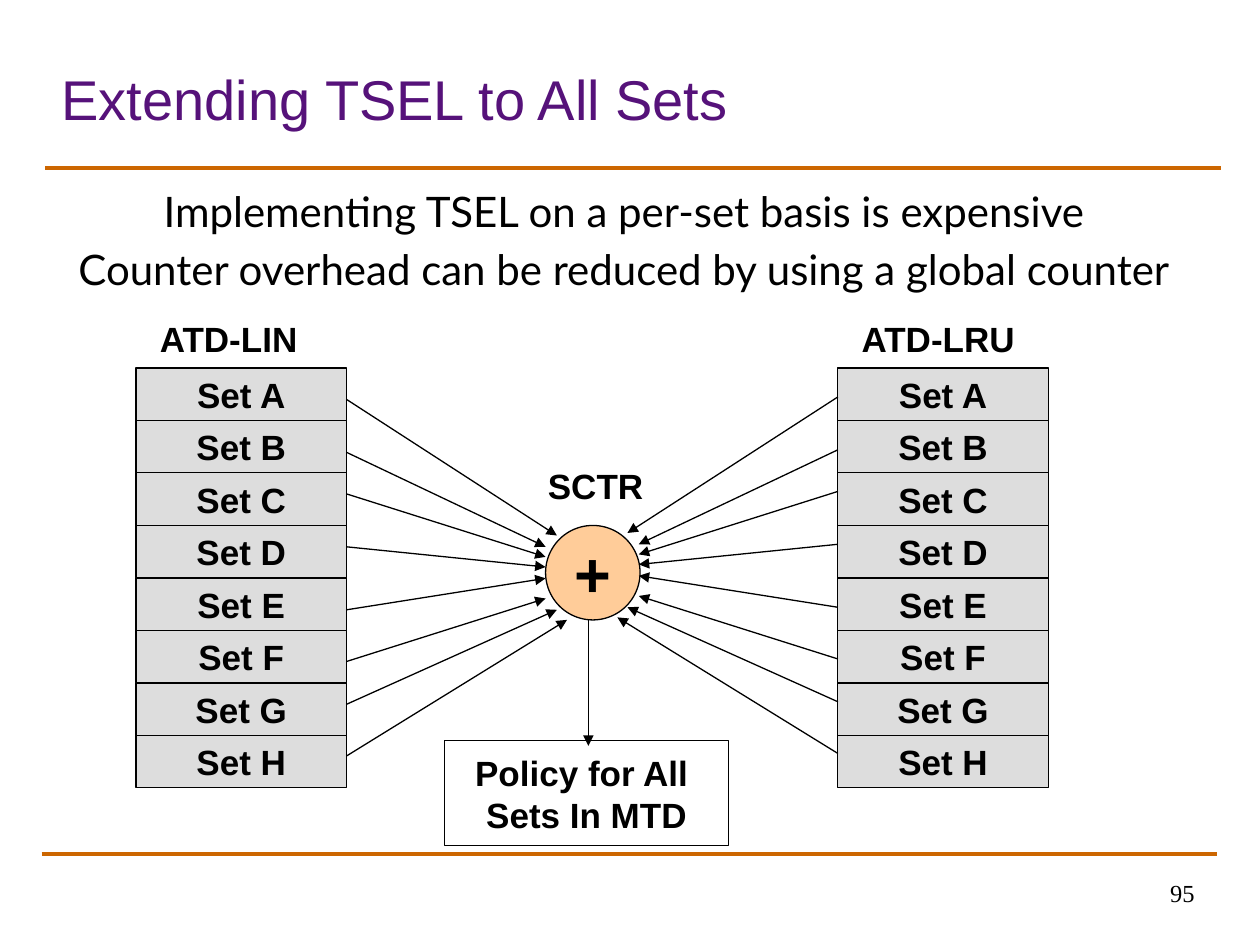
from lxml import etree
from pptx import Presentation
from pptx.dml.color import RGBColor
from pptx.enum.shapes import MSO_CONNECTOR, MSO_SHAPE
from pptx.enum.text import MSO_ANCHOR, PP_ALIGN
from pptx.oxml.ns import qn
from pptx.util import Inches, Pt

LINE = MSO_CONNECTOR.STRAIGHT
RECT, OVAL = MSO_SHAPE.RECTANGLE, MSO_SHAPE.OVAL
TOP, MID = MSO_ANCHOR.TOP, MSO_ANCHOR.MIDDLE
LEFT, CENTER, RIGHT = PP_ALIGN.LEFT, PP_ALIGN.CENTER, PP_ALIGN.RIGHT

BLACK = RGBColor(0x00, 0x00, 0x00)
PURPLE = RGBColor(0x56, 0x12, 0x7A)
ORANGE = RGBColor(0xCC, 0x66, 0x00)
PEACH = RGBColor(0xFF, 0xCC, 0x99)
GRAY = RGBColor(0xDD, 0xDD, 0xDD)

LABEL = {"name": "Arial", "size": Pt(20), "bold": True}
PLUS = {**LABEL, "size": Pt(36)}
TITLE = {"name": "Arial", "size": Pt(32)}
BODY = {"name": "Lato", "size": Pt(24)}
NUMBER = {"name": "Times New Roman", "size": Pt(14)}

ROW = 5 / 12
ARROWS = [
    (0.25, 1.67, 1.33), (0.67, 1.58, 1.42), (1, 1.58, 1.5), (1.42, 1.58, 1.58),
    (1.92, 1.58, 1.67), (2.33, 1.58, 1.83), (2.67, 1.67, 1.92), (3.08, 1.75, 2),
]


def assign(item, values):
    for key, value in values.items():
        setattr(item, key, value)


def write(frame, lines, font, color=BLACK, para=None, **values):
    assign(frame, {"word_wrap": False, "vertical_anchor": TOP, **values})
    for i, line in enumerate(lines):
        part = frame.paragraphs[0] if i == 0 else frame.add_paragraph()
        assign(part, {"alignment": LEFT, **(para or {})})
        run = part.add_run()
        run.text = line
        assign(run.font, font)
        run.font.color.rgb = color


def add_text(slide, box, lines, font, **values):
    area = slide.shapes.add_textbox(*map(Inches, box))
    write(area.text_frame, lines, font, **values)


def add_block(slide, kind, box, lines, font=LABEL, fill=None):
    shape = slide.shapes.add_shape(kind, *map(Inches, box))
    shape.shadow.inherit = False
    if fill is None:
        shape.fill.background()
    else:
        shape.fill.solid()
        shape.fill.fore_color.rgb = fill
    shape.line.color.rgb = BLACK
    shape.line.width = Pt(0.75)
    write(shape.text_frame, lines, font, para={"alignment": CENTER},
          vertical_anchor=MID)


def add_line(slide, ends, color=BLACK, width=0.75, arrow=True):
    line = slide.shapes.add_connector(LINE, *map(Inches, ends))
    line.line.color.rgb = color
    line.line.width = Pt(width)
    if arrow:
        tail = etree.SubElement(line.line._get_or_add_ln(), qn("a:tailEnd"))
        tail.set("type", "triangle")
    etree.SubElement(line._element.spPr, qn("a:effectLst"))


def add_frame(slide, left, top, width, height):
    for x, y in ((left + 0.03, top), (left, top + height)):
        add_line(slide, (x, y, x + width, y), ORANGE, 2.25, False)
    add_text(slide, (left + 8, top + height + 0.14, 1.25, 0.33), ["95"], NUMBER,
             para={"alignment": RIGHT}, word_wrap=True)
    add_text(slide, (left + 0.06, top - 0.96, 9.03, 0.91),
             ["Extending TSEL to All Sets"], TITLE, color=PURPLE,
             para={"line_spacing": 0.8}, word_wrap=True, vertical_anchor=MID)


def add_body(slide, *box):
    lines = ["Implementing TSEL on a per-set basis is expensive",
             "Counter overhead can be reduced by using a global counter"]
    add_text(slide, box, lines, BODY, word_wrap=True, margin_left=Inches(0.6),
             para={"alignment": CENTER, "space_before": Pt(4.8)})


def add_center(slide, left, top, width, height):
    mid = left + 1.14
    add_block(slide, OVAL, (left + 0.8, top + 0.53, 0.75, 0.75), ["+"], PLUS, PEACH)
    add_text(slide, (left + 0.72, top, 0.96, 0.43), ["SCTR"], LABEL)
    add_line(slide, (mid, top + 1.28, mid, top + 2.28))
    add_block(slide, RECT, (left, top + height - 0.83, width, 0.83),
              ["Policy for All ", "Sets In MTD"])


def add_sets(slide, name, left, top, width, span, edge, side, shift=0):
    add_text(slide, (left + 0.09, top - 0.45, span, 0.43), [name], LABEL)
    for i, letter in enumerate("ABCDEFGH"):
        add_block(slide, RECT, (left, top + i * ROW, width, ROW),
                  [f"Set {letter}"], fill=GRAY)
    for start, reach, end in ARROWS:
        add_line(slide, (edge, top + start + shift,
                         edge + side * reach, top + end + shift))


def main():
    deck = Presentation()
    deck.slide_width, deck.slide_height = Inches(10), Inches(7.5)
    slide = deck.slides.add_slide(deck.slide_layouts[6])
    add_frame(slide, 0.33, 1.33, 9.33, 5.45)
    add_body(slide, -0.09, 1.42, 9.58, 1.17)
    add_center(slide, 3.53, 3.64, 2.25, 3.07)
    add_sets(slide, "ATD-LIN", 1.08, 2.92, 1.67, 1.31, 2.75, 1)
    add_sets(slide, "ATD-LRU", 6.65, 2.92, 1.67, 1.44, 6.65, -1, -0.02)
    deck.save("out.pptx")


if __name__ == "__main__":
    main()
